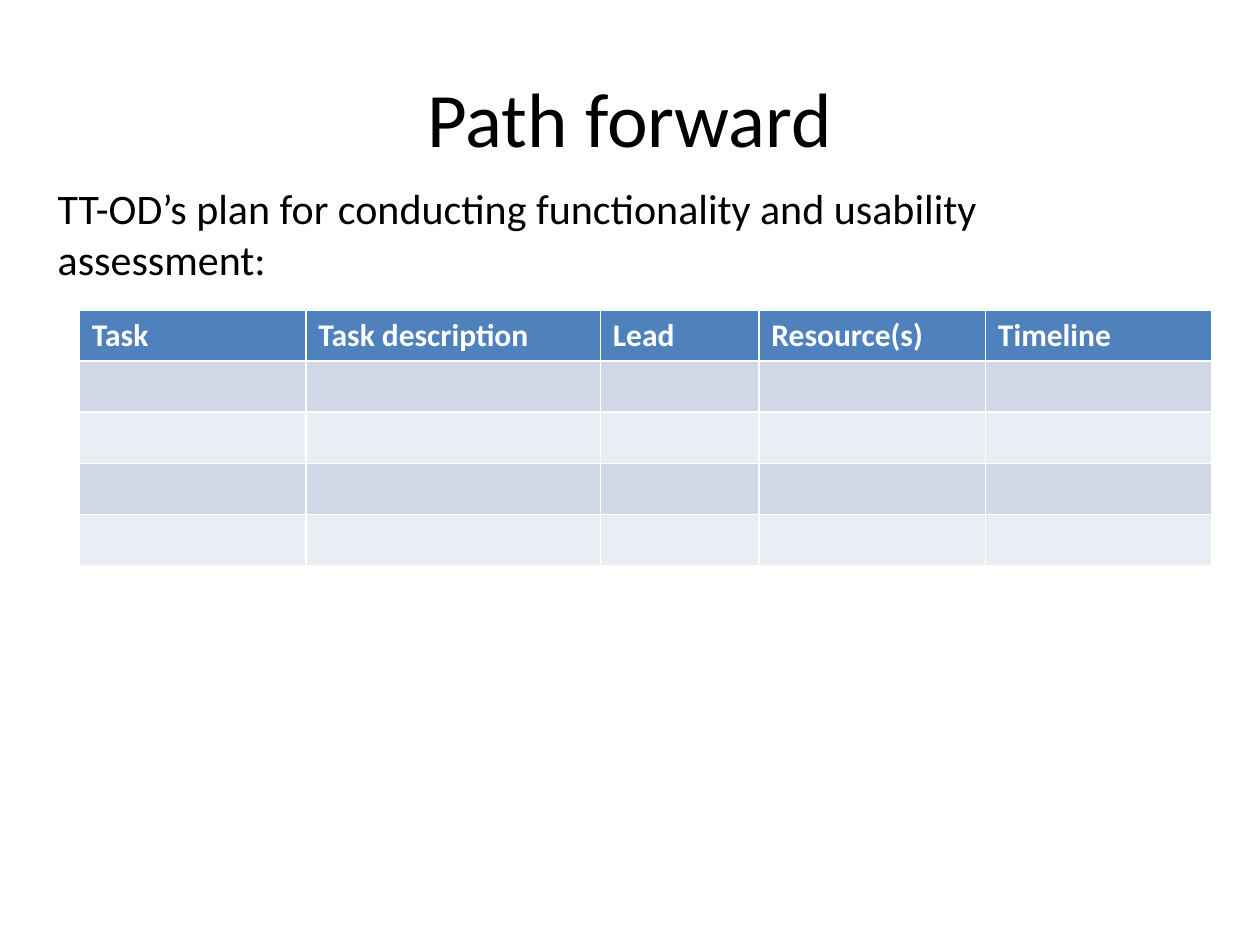
from pptx import Presentation
from pptx.dml.color import RGBColor
from pptx.enum.text import MSO_ANCHOR, PP_ALIGN
from pptx.util import Inches, Pt

FONT = "Calibri"
COLORS = {"text": "000000", "head": "4F81BD", "head_text": "FFFFFF",
          "band_dark": "D0D8E8", "band_light": "E9EDF4"}
HEADERS = ["Task", "Task description", "Lead", "Resource(s)", "Timeline"]
COL_SHARES = [0.2, 0.26, 0.14, 0.2, 0.2]
ROWS = 5


def color(name):
    return RGBColor.from_string(COLORS[name])


def add_run(p, text, size, color_name="text", bold=False):
    r = p.add_run()
    r.text = text
    r.font.name = FONT
    r.font.size = Pt(size)
    r.font.bold = bold
    r.font.color.rgb = color(color_name)


def add_text(s, box, text, size, align=PP_ALIGN.LEFT, anchor=MSO_ANCHOR.TOP):
    tf = s.shapes.add_textbox(*box).text_frame
    tf.word_wrap = True
    tf.vertical_anchor = anchor
    p = tf.paragraphs[0]
    p.alignment = align
    add_run(p, text, size)


def add_plan_table(s, box):
    # White rules come from the default table style
    table = s.shapes.add_table(ROWS, len(HEADERS), *box).table
    for col, share in zip(table.columns, COL_SHARES):
        col.width = int(box[2] * share)
    for i, row in enumerate(table.rows):
        row.height = int(box[3] / ROWS)
        fill = "head" if i == 0 else "band_dark" if i % 2 else "band_light"
        for cell in row.cells:
            cell.fill.solid()
            cell.fill.fore_color.rgb = color(fill)
    # Header labels
    for cell, label in zip(table.rows[0].cells, HEADERS):
        add_run(cell.text_frame.paragraphs[0], label, 18, "head_text", True)


def main():
    prs = Presentation()
    prs.slide_width, prs.slide_height = Inches(10), Inches(7.5)
    s = prs.slides.add_slide(prs.slide_layouts[6])

    def box(*inches):
        return [Inches(v) for v in inches]

    # Title
    add_text(s, box(0.5, 0.3, 9, 1.25), "Path forward", 44,
             PP_ALIGN.CENTER, MSO_ANCHOR.MIDDLE)
    # Introduction
    add_text(s, box(0.36, 1.4, 8.93, 2.12),
             "TT-OD’s plan for conducting functionality and usability assessment:", 24)
    # Task plan
    add_plan_table(s, box(0.63, 2.46, 8.99, 2.03))
    prs.save("out.pptx")


if __name__ == "__main__":
    main()
